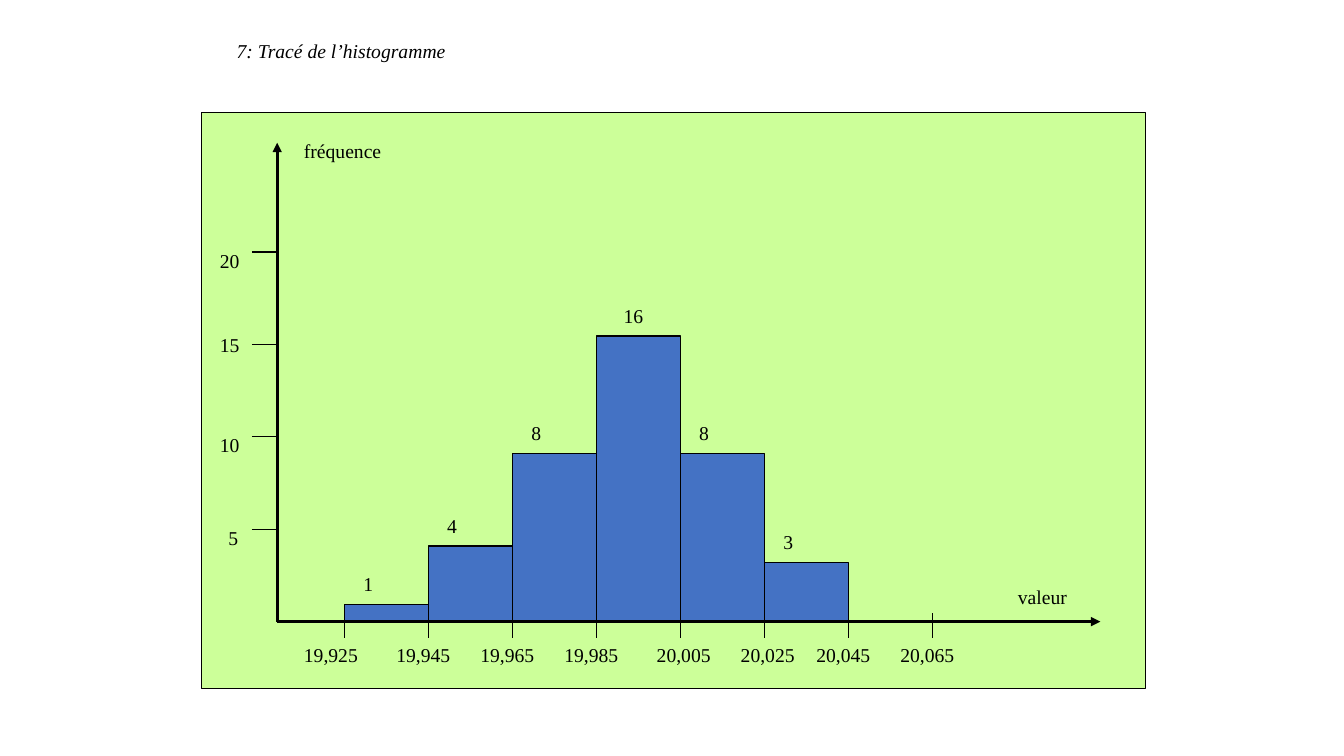
"""Build a slide showing a hand-drawn histogram of measured values."""
from lxml.etree import SubElement
from pptx import Presentation
from pptx.dml.color import RGBColor
from pptx.enum.shapes import MSO_CONNECTOR, MSO_SHAPE
from pptx.oxml.ns import qn
from pptx.util import Pt

TITLE = "7: Tracé de l’histogramme"
BARS = [("1", 16, 16), ("4", 72, 16), ("8", 160, 16),
        ("16", 272, 24), ("8", 160, 16), ("3", 56, 16)]
VALUES = [("19,925", 280), ("19,945", 368), ("19,965", 448), ("19,985", 528),
          ("20,005", 616), ("20,025", 696), ("20,045", 768), ("20,065", 848)]
FREQUENCIES = [("5", 208, 496), ("10", 200, 408), ("15", 200, 312), ("20", 200, 232)]

BLACK = RGBColor(0x00, 0x00, 0x00)
GREEN = RGBColor(0xCC, 0xFF, 0x99)
BLUE = RGBColor(0x44, 0x72, 0xC4)
FONT = "Times New Roman"

PX = 9525
AXIS_X, BASE_Y = 264, 592
AXIS_TOP, AXIS_RIGHT = 136, 1048
FIRST_BAR, BAR_WIDTH = 328, 80
FREQUENCY_STEP = 88
LABEL_HEIGHT = 33

deck = Presentation()
deck.slide_width, deck.slide_height = 1280 * PX, 720 * PX
page = deck.slides.add_slide(deck.slide_layouts[6])


def add_text(text, left, top, width, height=LABEL_HEIGHT, italic=False, tight=False):
    box = page.shapes.add_textbox(left * PX, top * PX, width * PX, height * PX)
    frame = box.text_frame
    frame.word_wrap = True
    if tight:
        frame.margin_left = frame.margin_right = 2 * PX
        frame.margin_top = frame.margin_bottom = PX
    frame.text = text
    font = frame.paragraphs[0].runs[0].font
    font.name, font.size, font.italic = FONT, Pt(14), italic
    font.color.rgb = BLACK


def add_rectangle(left, top, width, height, color):
    shape = page.shapes.add_shape(
        MSO_SHAPE.RECTANGLE, left * PX, top * PX, width * PX, height * PX)
    shape.shadow.inherit = False
    shape.fill.solid()
    shape.fill.fore_color.rgb = color
    shape.line.color.rgb = BLACK
    shape.line.width = Pt(0.75)


def add_line(x1, y1, x2, y2, axis=False):
    line = page.shapes.add_connector(
        MSO_CONNECTOR.STRAIGHT, x1 * PX, y1 * PX, x2 * PX, y2 * PX)
    line.line.color.rgb = BLACK
    line.line.width = Pt(2.25 if axis else 0.75)
    if axis:
        SubElement(line.line._get_or_add_ln(), qn("a:tailEnd"), type="triangle")
    SubElement(line._element.spPr, qn("a:effectLst"))


add_text(TITLE, 216, 32, 248, italic=True)
add_rectangle(192, 107, 899, 549, GREEN)

add_line(AXIS_X, BASE_Y, AXIS_X, AXIS_TOP, axis=True)
add_text("fréquence", 280, 128, 112)
for step, (label, left, top) in enumerate(FREQUENCIES, start=1):
    tick_y = BASE_Y - step * FREQUENCY_STEP
    add_line(AXIS_X - 24, tick_y, AXIS_X, tick_y)
    add_text(label, left, top, 240 - left)

for index, (count, height, indent) in enumerate(BARS):
    left, top = FIRST_BAR + index * BAR_WIDTH, BASE_Y - height
    add_rectangle(left, top, BAR_WIDTH, height, BLUE)
    add_text(count, left + indent, top - 32, 40, 25, tight=True)

add_line(AXIS_X, BASE_Y, AXIS_RIGHT, BASE_Y, axis=True)
for index, (label, left) in enumerate(VALUES):
    tick_x = FIRST_BAR + index * BAR_WIDTH
    add_line(tick_x, BASE_Y - 8, tick_x, BASE_Y + 16)
    add_text(label, left, BASE_Y + 16, 72)
add_text("valeur", 960, 552, 72)

deck.save("out.pptx")
